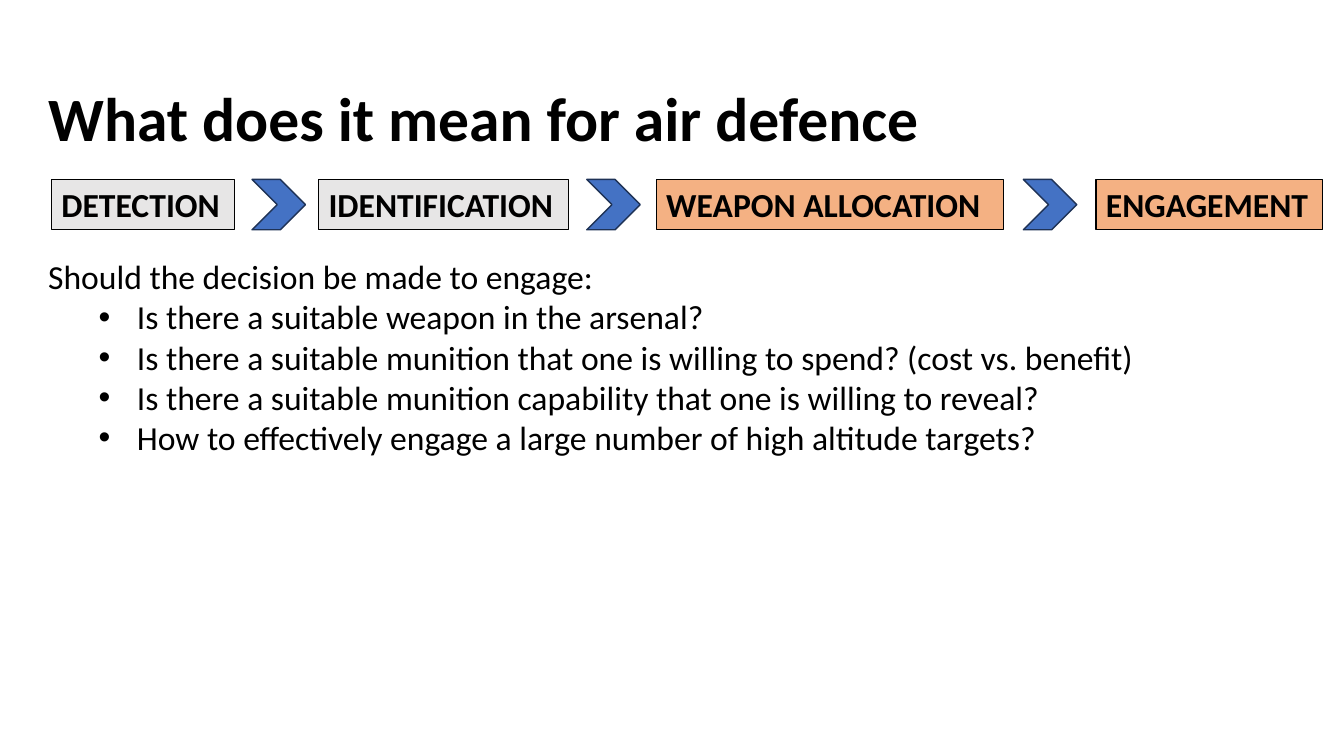
import pptx
import pptx.util
import pptx.dml.color
import pptx.enum.shapes
import pptx.enum.text
import pptx.oxml.ns
from lxml import etree
from pptx.util import Inches

STAGE_TOP, STAGE_HEIGHT = 1.78, 0.5
STAGES = [
    ("DETECTION", 0.51, 1.82, "E7E6E6"),
    ("IDENTIFICATION", 3.16, 2.48, "E7E6E6"),
    ("WEAPON ALLOCATION", 6.51, 3.44, "F4B183"),
    ("ENGAGEMENT", 10.87, 2.25, "F4B183"),
]
CHEVRON_LEFTS = [2.5, 5.82, 10.15]
QUESTIONS = [
    "Is there a suitable weapon in the arsenal?",
    "Is there a suitable munition that one is willing to spend? (cost vs. benefit)",
    "Is there a suitable munition capability that one is willing to reveal?",
    "How to effectively engage a large number of high altitude targets?",
]


def color(value):
    return pptx.dml.color.RGBColor.from_string(value)


def add_span(para, text, size, bold=False):
    span = para.add_run()
    span.text = text
    span.font.name = "Calibri"
    span.font.size = pptx.util.Pt(size)
    span.font.bold = bold
    span.font.color.rgb = color("000000")


def add_text_box(page, left, top, width, height):
    box = page.shapes.add_textbox(Inches(left), Inches(top), Inches(width), Inches(height))
    box.text_frame.word_wrap = True
    box.text_frame.auto_size = pptx.enum.text.MSO_AUTO_SIZE.SHAPE_TO_FIT_TEXT
    return box.text_frame


def add_bullet(para):
    para.level = 1
    properties = para._p.get_or_add_pPr()
    properties.set("marL", str(Inches(0.88)))
    properties.set("indent", str(Inches(-0.38)))
    for tag, name, value in (("a:buFont", "typeface", "Arial"), ("a:buChar", "char", "•")):
        etree.SubElement(properties, pptx.oxml.ns.qn(tag)).set(name, value)


def add_flow_shape(page, kind, left, width, fill, line, line_width):
    shape = page.shapes.add_shape(
        kind, Inches(left), Inches(STAGE_TOP), Inches(width), Inches(STAGE_HEIGHT))
    shape.shadow.inherit = False
    shape.fill.solid()
    shape.fill.fore_color.rgb = color(fill)
    shape.line.color.rgb = color(line)
    shape.line.width = pptx.util.Pt(line_width)
    return shape


def add_stage(page, label, left, width, fill):
    rectangle = pptx.enum.shapes.MSO_SHAPE.RECTANGLE
    frame = add_flow_shape(page, rectangle, left, width, fill, "000000", 0.75).text_frame
    frame.word_wrap = True
    frame.auto_size = pptx.enum.text.MSO_AUTO_SIZE.SHAPE_TO_FIT_TEXT
    frame.vertical_anchor = pptx.enum.text.MSO_ANCHOR.TOP
    frame.paragraphs[0].alignment = pptx.enum.text.PP_ALIGN.JUSTIFY
    add_span(frame.paragraphs[0], label, 24, bold=True)


def add_questions(page):
    frame = add_text_box(page, 0.38, 2.49, 11.94, 2.12)
    intro = frame.paragraphs[0]
    intro.alignment = pptx.enum.text.PP_ALIGN.JUSTIFY
    add_span(intro, "Should the decision be made to engage:", 24)
    for question in QUESTIONS:
        para = frame.add_paragraph()
        para.alignment = pptx.enum.text.PP_ALIGN.JUSTIFY
        add_bullet(para)
        add_span(para, question, 24)


def main():
    deck = pptx.Presentation()
    deck.slide_width, deck.slide_height = Inches(13.33), Inches(7.5)
    page = deck.slides.add_slide(deck.slide_layouts[6])
    title = add_text_box(page, 0.38, 0.74, 10.79, 0.84)
    add_span(title.paragraphs[0], "What does it mean for air defence", 44, bold=True)
    add_questions(page)
    for label, left, width, fill in STAGES:
        add_stage(page, label, left, width, fill)
    for left in CHEVRON_LEFTS:
        add_flow_shape(
            page, pptx.enum.shapes.MSO_SHAPE.CHEVRON, left, 0.53, "4472C4", "1E3256", 1)
    deck.save("out.pptx")


if __name__ == "__main__":
    main()
